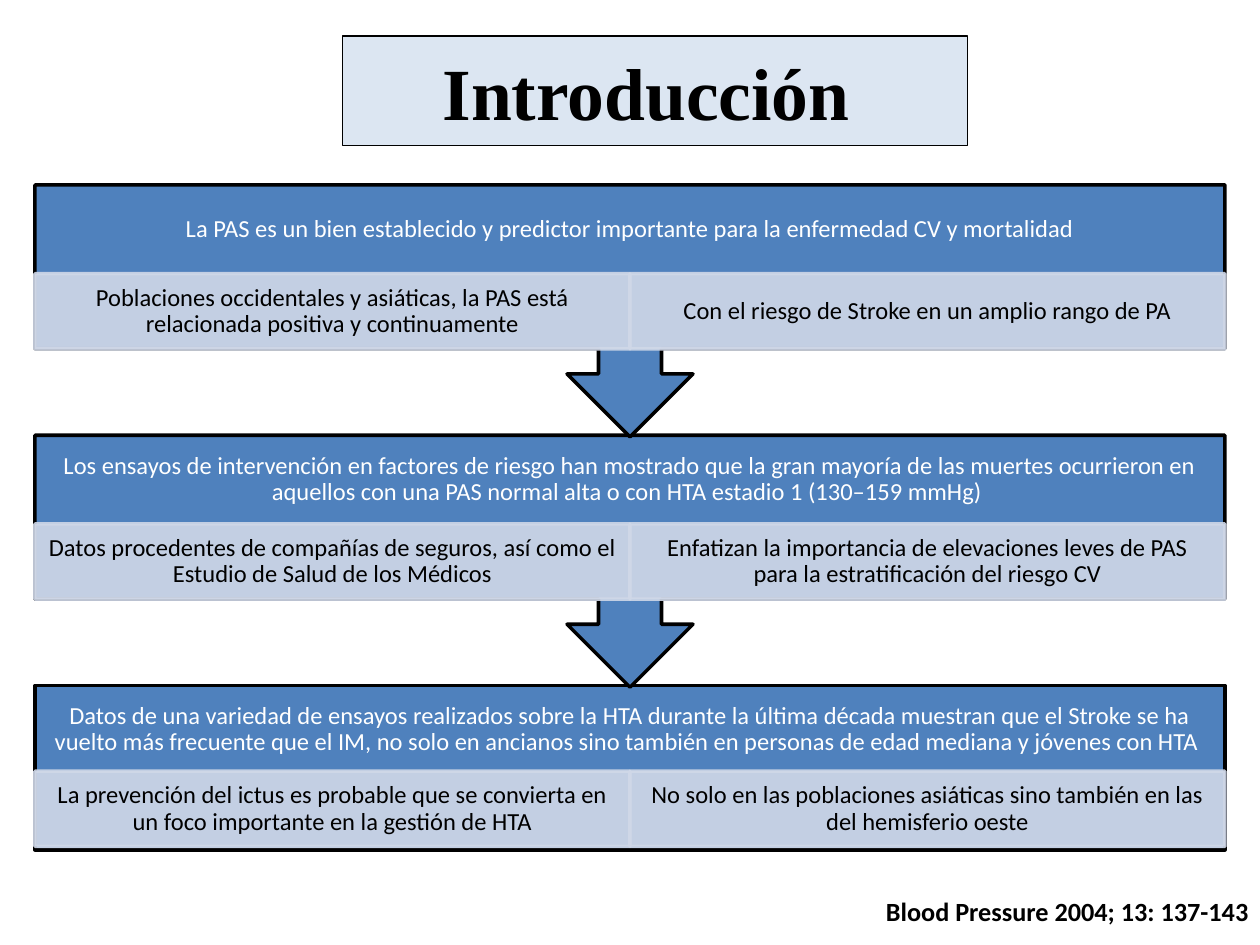
from pptx import Presentation
from pptx.dml.color import RGBColor
from pptx.enum.shapes import MSO_SHAPE
from pptx.enum.text import MSO_ANCHOR, PP_ALIGN
from pptx.oxml.ns import qn
from pptx.util import Pt
from lxml.etree import SubElement


def rgb(value):
    return RGBColor.from_string(value)


class Deck:
    font = "Calibri"
    size = 14
    black = "000000"
    white = "FFFFFF"
    blue = "4F81BD"
    pale = "D0D8E8"

    def __init__(self, width, height):
        self.prs = Presentation()
        self.prs.slide_width = Pt(width)
        self.prs.slide_height = Pt(height)
        self.s = self.prs.slides.add_slide(self.prs.slide_layouts[6])

    def shape(self, kind, box, fill, line, weight=2, alpha=None):
        sp = self.s.shapes.add_shape(kind, *map(Pt, box))
        sp.shadow.inherit = False
        sp.fill.solid()
        sp.fill.fore_color.rgb = rgb(fill)
        sp.line.color.rgb = rgb(line)
        sp.line.width = Pt(weight)
        if alpha:
            for color in sp._element.spPr.iter(qn("a:srgbClr")):
                SubElement(color, qn("a:alpha"), val=str(alpha * 1000))
        return sp

    def label(self, sp, text, color, size=size, font=font, bold=False,
              align=PP_ALIGN.CENTER, anchor=MSO_ANCHOR.MIDDLE,
              inset=(7.2, 3.6), spacing=None):
        tf = sp.text_frame
        tf.word_wrap = True
        tf.vertical_anchor = anchor
        tf.margin_left = tf.margin_right = Pt(inset[0])
        tf.margin_top = tf.margin_bottom = Pt(inset[1])
        p = tf.paragraphs[0]
        p.text = text
        p.alignment = align
        p.line_spacing = spacing
        p.font.name = font
        p.font.size = Pt(size)
        p.font.bold = bold
        p.font.color.rgb = rgb(color)

    def text(self, box, text, color, **style):
        sp = self.s.shapes.add_textbox(*map(Pt, box))
        self.label(sp, text, color, **style)

    def title(self, box, text):
        sp = self.shape(MSO_SHAPE.RECTANGLE, box, "DCE6F2", self.black, 0.75)
        self.label(sp, text, self.black, size=42, font="Times New Roman", bold=True)

    def source(self, box, text):
        self.text(box, text, self.black, size=15, bold=True,
                  align=PP_ALIGN.RIGHT, anchor=MSO_ANCHOR.TOP)

    def step(self, left, top, width, heading, details, last):
        if last:
            self.shape(MSO_SHAPE.RECTANGLE, (left, top, width, 94), self.blue, self.black)
        else:
            sp = self.shape(MSO_SHAPE.UP_ARROW_CALLOUT, (left, top, width, 144),
                            self.blue, self.black)
            sp.rotation = 180
        self.text((left, top, width, 50.5), heading, self.white,
                  inset=(7.9, 7.9), spacing=0.9)
        detail_top = top + (49 if last else 50.7)
        half = width / 2
        for i, detail in enumerate(details):
            sp = self.shape(MSO_SHAPE.RECTANGLE, (left + i * half, detail_top, half, 43),
                            self.pale, self.pale, alpha=90)
            self.label(sp, detail, self.black, inset=(7.9, 1.4), spacing=0.9)


STEPS = [
    ("La PAS es un bien establecido y predictor importante para la enfermedad CV y mortalidad",
     ("Poblaciones occidentales y asiáticas, la PAS está relacionada positiva y continuamente",
      "Con el riesgo de Stroke en un amplio rango de PA")),
    ("Los ensayos de intervención en factores de riesgo han mostrado que la gran mayoría de las "
     "muertes ocurrieron en aquellos con una PAS normal alta o con HTA estadio 1 (130–159 mmHg) ",
     ("Datos procedentes de compañías de seguros, así como el Estudio de Salud de los Médicos",
      "Enfatizan la importancia de elevaciones leves de PAS para la estratificación del riesgo CV")),
    ("Datos de una variedad de ensayos realizados sobre la HTA durante la última década muestran "
     "que el Stroke se ha vuelto más frecuente que el IM, no solo en ancianos sino también en "
     "personas de edad mediana y jóvenes con HTA ",
     ("La prevención del ictus es probable que se convierta en un foco importante en la gestión de HTA",
      "No solo en las poblaciones asiáticas sino también en las del hemisferio oeste")),
]


def main():
    deck = Deck(720, 540)
    deck.title((195.8, 20.6, 357.2, 62.4), "Introducción ")
    deck.source((162, 508.3, 558.7, 25.4), "Blood Pressure 2004; 13: 137-143")
    last = len(STEPS) - 1
    for i in reversed(range(len(STEPS))):
        heading, details = STEPS[i]
        deck.step(20, 105.7 + 143 * i, 680, heading, details, i == last)
    deck.prs.save("out.pptx")


if __name__ == "__main__":
    main()
